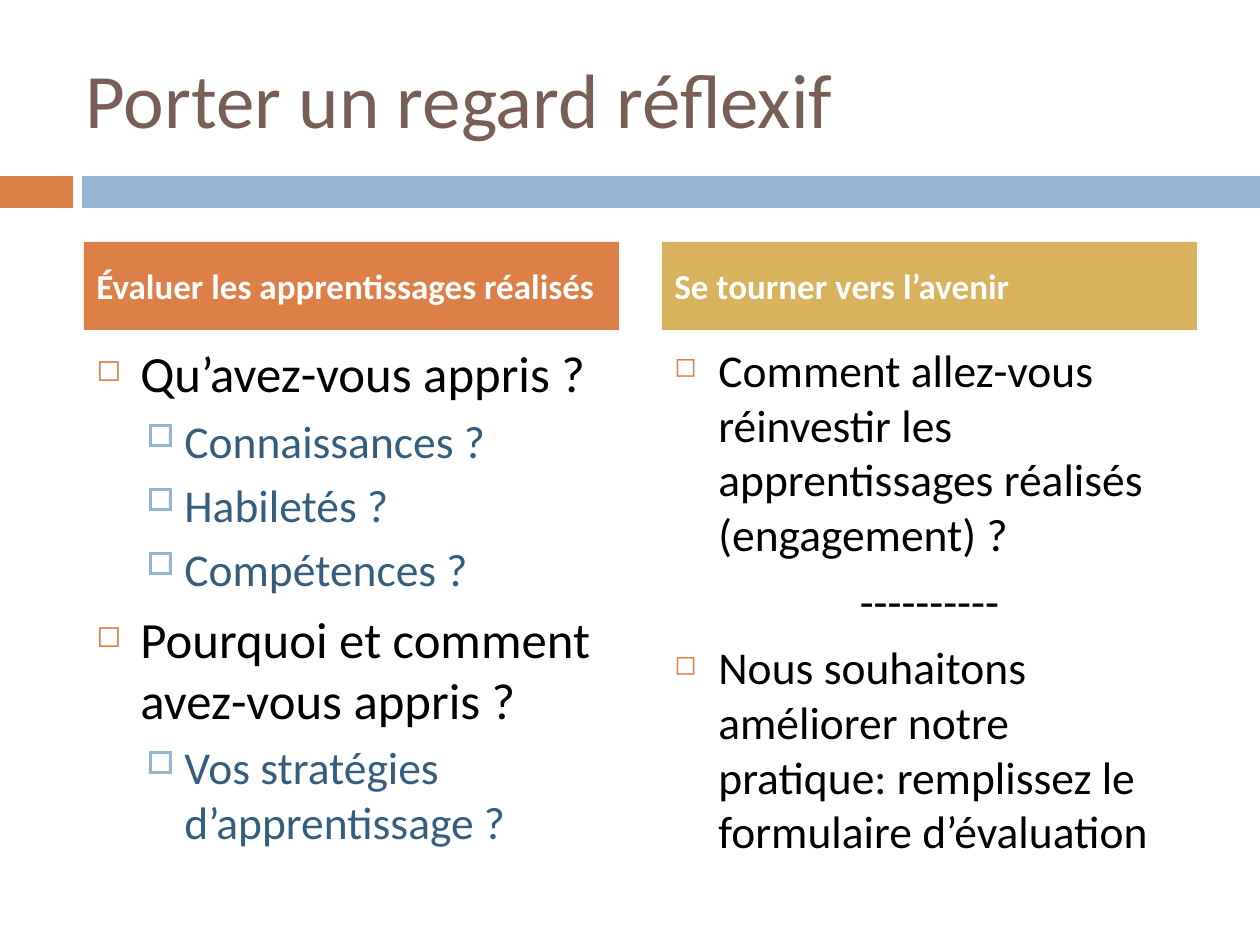
"""Build the slide that invites a look back and a look ahead."""
from lxml import etree
from pptx import Presentation
from pptx.dml.color import RGBColor
from pptx.enum.shapes import MSO_SHAPE
from pptx.enum.text import MSO_ANCHOR, MSO_AUTO_SIZE, PP_ALIGN
from pptx.oxml.ns import qn
from pptx.util import Pt

RECT = MSO_SHAPE.RECTANGLE
TOP, MIDDLE = MSO_ANCHOR.TOP, MSO_ANCHOR.MIDDLE
LEFT, CENTER = PP_ALIGN.LEFT, PP_ALIGN.CENTER
FIXED = MSO_AUTO_SIZE.NONE

THEME = {
    "font": "Calibri", "brown": "775F55", "rust": "DD8047", "sky": "94B6D2",
    "gold": "D8B25C", "navy": "355D7E", "black": "000000", "white": "FFFFFF",
    "title": 44, "head": 20, "large": 29, "small": 26,
}
TITLE = "Porter un regard réflexif"
BANDS = [(0, 73, "rust"), (82, 1178, "sky")]
COLUMNS = [
    {"head": "Évaluer les apprentissages réalisés", "fill": "rust",
     "size": "large", "high": 580, "items": [
         ("main", "Qu’avez-vous appris ?"),
         ("sub", "Connaissances ?"),
         ("sub", "Habiletés ?"),
         ("sub", "Compétences ?"),
         ("main", "Pourquoi et comment avez-vous appris ?"),
         ("sub", "Vos stratégies d’apprentissage ?")]},
    {"head": "Se tourner vers l’avenir", "fill": "gold",
     "size": "small", "high": 530, "items": [
         ("main", "Comment allez-vous réinvestir les apprentissages réalisés "
                  "(engagement) ?"),
         ("rule", "----------"),
         ("main", "Nous souhaitons améliorer notre pratique: remplissez le "
                  "formulaire d’évaluation")]},
]
KINDS = {
    "main": {"color": "black", "before": 7, "indent": (44, -44),
             "bullet": ("◻", "rust", 60)},
    "sub": {"color": "navy", "size": "small", "before": 5.5, "level": 1,
            "indent": (88, -38), "bullet": ("□", "sky", 70)},
    "rule": {"color": "black", "before": 7, "indent": (44, -44),
             "align": CENTER},
}
SCALE = 914400 / 126
EDGE, WIDE, STEP = 84, 535, 578


def px(count):
    """Turn px into EMU."""
    return round(count * SCALE)


def tint(name):
    """Look up a theme colour."""
    return RGBColor.from_string(THEME[name])


def mark(props, sign, color, share):
    """Give a paragraph its bullet."""
    hue = etree.SubElement(props, qn("a:buClr"))
    etree.SubElement(hue, qn("a:srgbClr"), val=THEME[color])
    etree.SubElement(props, qn("a:buSzPct"), val=str(share * 1000))
    etree.SubElement(props, qn("a:buChar"), char=sign)


def write(para, text, size, color, bold=False, align=LEFT, before=0,
          level=0, indent=(0, 0), bullet=None):
    """Write one paragraph in the given format."""
    para.alignment, para.level, para.space_before = align, level, Pt(before)
    props = para._p.get_or_add_pPr()
    props.set("marL", str(px(indent[0])))
    props.set("indent", str(px(indent[1])))
    if bullet:
        mark(props, *bullet)
    run = para.add_run()
    run.text = text
    font = run.font
    font.name, font.size, font.bold = THEME["font"], Pt(THEME[size]), bold
    font.color.rgb = tint(color)


def setup(shape, anchor):
    """Ready a text frame and return it."""
    frame = shape.text_frame
    frame.word_wrap, frame.auto_size = True, FIXED
    frame.vertical_anchor = anchor
    return frame


def block(slide, box, fill):
    """Draw a plain filled rectangle."""
    shape = slide.shapes.add_shape(RECT, *map(px, box))
    shape.shadow.inherit = False
    shape.fill.solid()
    shape.fill.fore_color.rgb = tint(fill)
    shape.line.fill.background()
    return shape


def column(slide, left, data):
    """Draw a heading with its list below."""
    head = block(slide, (left, 242, WIDE, 88), data["fill"])
    write(setup(head, MIDDLE).paragraphs[0], data["head"], size="head",
          color="white", bold=True, before=7)
    body = slide.shapes.add_textbox(*map(px, (left, 336, WIDE, data["high"])))
    frame = setup(body, TOP)
    for place, (kind, text) in enumerate(data["items"]):
        para = frame.add_paragraph() if place else frame.paragraphs[0]
        write(para, text, **{"size": data["size"], **KINDS[kind]})


def main():
    """Build and save the slide."""
    deck = Presentation()
    deck.slide_width, deck.slide_height = px(1260), px(945)
    slide = deck.slides.add_slide(deck.slide_layouts[5])
    for left, wide, fill in BANDS:
        block(slide, (left, 176, wide, 32), fill)
    title = slide.shapes.title
    title.left, title.top, title.width, title.height = map(
        px, (73, 38, 1124, 120))
    write(setup(title, MIDDLE).paragraphs[0], TITLE, size="title",
          color="brown")
    for place, data in enumerate(COLUMNS):
        column(slide, EDGE + place * STEP, data)
    deck.save("out.pptx")


if __name__ == "__main__":
    main()
